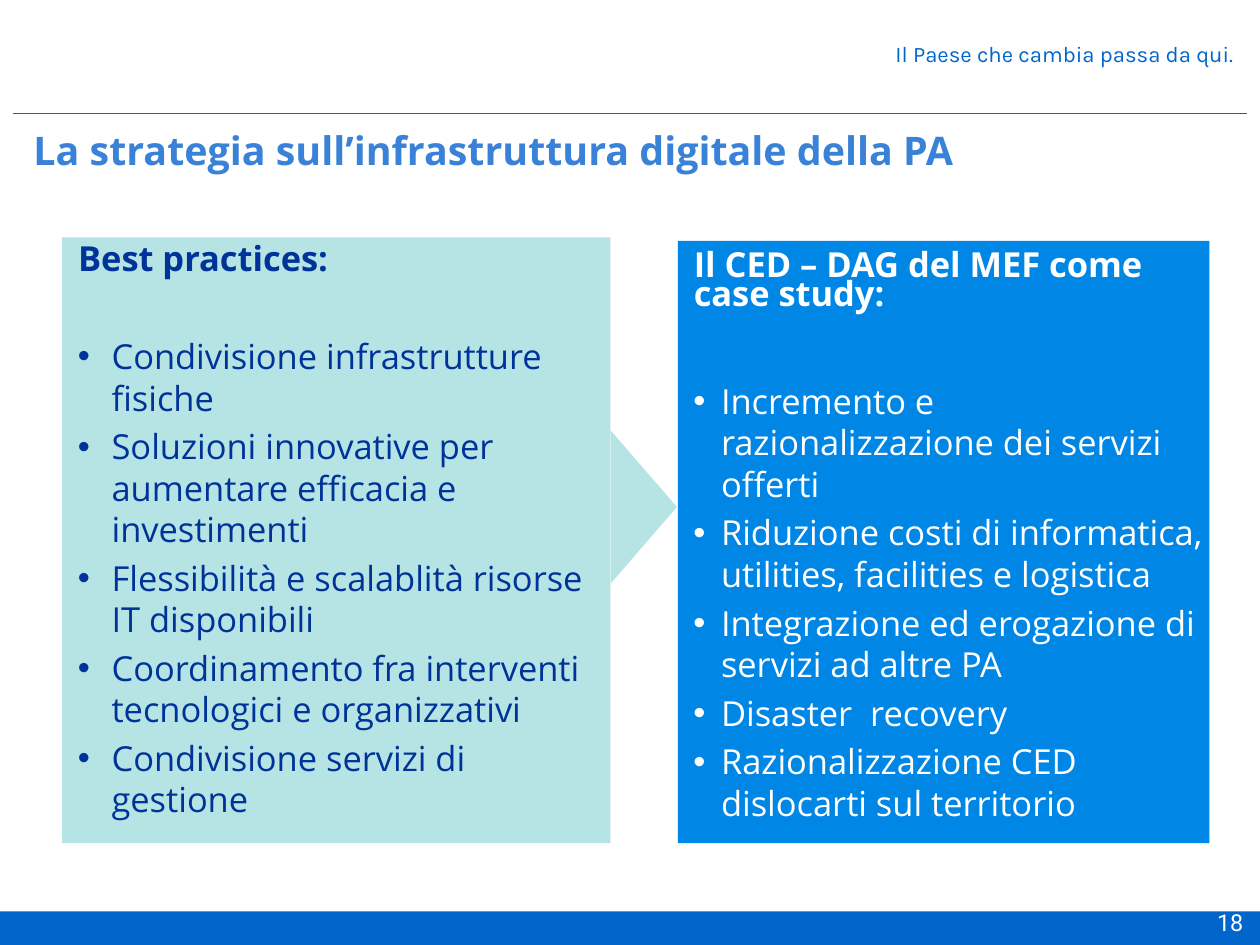
from pptx import Presentation
from pptx.dml.color import RGBColor
from pptx.enum.shapes import MSO_CONNECTOR, MSO_SHAPE
from pptx.enum.text import MSO_ANCHOR, PP_ALIGN
from pptx.oxml.ns import qn
from pptx.util import Cm, Pt
from lxml import etree

RECTANGLE = MSO_SHAPE.RECTANGLE
TRIANGLE = MSO_SHAPE.ISOSCELES_TRIANGLE
TOP, MIDDLE = MSO_ANCHOR.TOP, MSO_ANCHOR.MIDDLE
LEFT, RIGHT = PP_ALIGN.LEFT, PP_ALIGN.RIGHT

COLORS = {
    "blue": "0066CC",
    "title": "3982D8",
    "navy": "003399",
    "aqua": "B6E3E3",
    "azure": "0087E6",
    "white": "FFFFFF",
}
HEADING_INDENT = 0.46

presentation = Presentation()
presentation.slide_width = Cm(36.12)
presentation.slide_height = Cm(27.1)
slide = presentation.slides.add_slide(presentation.slide_layouts[5])


def add_filled_shape(kind, box, color):
    shape = slide.shapes.add_shape(kind, *(Cm(length) for length in box))
    shape.shadow.inherit = False
    shape.fill.solid()
    shape.fill.fore_color.rgb = RGBColor.from_string(COLORS[color])
    shape.line.fill.background()
    return shape


def format_paragraph(paragraph, text, color, font, **layout):
    paragraph.text = text
    for name, value in layout.items():
        setattr(paragraph, name, value)
    for name, value in font.items():
        setattr(paragraph.font, name, value)
    paragraph.font.color.rgb = RGBColor.from_string(COLORS[color])


# Footer band and header line
add_filled_shape(RECTANGLE, (0, 26.14, 36.12, 0.96), "blue")
header_line = slide.shapes.add_connector(
    MSO_CONNECTOR.STRAIGHT, Cm(0.38), Cm(3.25), Cm(35.74), Cm(3.25))
header_line.line.color.rgb = RGBColor.from_string(COLORS["blue"])
header_line.line.width = Pt(1)
etree.SubElement(header_line._element.spPr, qn("a:effectLst"))

# Title, slogan and page number
title = slide.shapes.title
slogan = slide.shapes.add_textbox(0, 0, 0, 0)
page_number = slide.shapes.add_textbox(0, 0, 0, 0)
labels = [
    (title, (0.71, 3.76, 33.6, 1.35), (0.25, 0.13), TOP,
     "La strategia sull’infrastruttura digitale della PA", "title",
     {"name": "Open Sans", "size": Pt(32), "bold": True},
     {"alignment": LEFT, "line_spacing": 0.8}),
    (slogan, (25.5, 0.99, 10.01, 1.12), (0.15, 0.15), MIDDLE,
     "Il Paese che cambia passa da qui.", "blue",
     {"name": "Karla", "size": Pt(18)}, {"alignment": RIGHT}),
    (page_number, (30.23, 26.04, 5.41, 1.02), (0, 0), TOP,
     "18", "white",
     {"name": "Roboto", "size": Pt(19)}, {"alignment": RIGHT}),
]
for shape, box, insets, anchor, text, color, font, layout in labels:
    shape.left, shape.top, shape.width, shape.height = (Cm(length) for length in box)
    frame = shape.text_frame
    frame.word_wrap = True
    frame.vertical_anchor = anchor
    frame.margin_left = frame.margin_right = Cm(insets[0])
    frame.margin_top = frame.margin_bottom = Cm(insets[1])
    format_paragraph(frame.paragraphs[0], text, color, font, **layout)

# Panels: practices on the left, case study on the right
panels = [
    {"box": (1.78, 6.81, 15.72, 17.37), "fill": "aqua", "color": "navy",
     "top": 0, "heading_spacing": 1.0, "gap": 46, "indent": 1.42, "hanging": 0.97,
     "heading": "Best practices:",
     "bullets": [
         "Condivisione infrastrutture fisiche",
         "Soluzioni innovative per aumentare efficacia e investimenti",
         "Flessibilità e scalablità risorse IT disponibili",
         "Coordinamento fra interventi tecnologici e organizzativi",
         "Condivisione servizi di gestione",
     ]},
    {"box": (19.43, 6.91, 15.24, 17.27), "fill": "azure", "color": "white",
     "top": 0.39, "heading_spacing": 0.7, "gap": 55, "indent": 1.24, "hanging": 0.79,
     "heading": "Il CED – DAG del MEF come case study:",
     "bullets": [
         "Incremento e razionalizzazione dei servizi offerti",
         "Riduzione costi di informatica, utilities, facilities e logistica",
         "Integrazione ed erogazione di servizi ad altre PA",
         "Disaster  recovery",
         "Razionalizzazione CED dislocarti sul territorio",
     ]},
]
for panel in panels:
    frame = add_filled_shape(RECTANGLE, panel["box"], panel["fill"]).text_frame
    frame.word_wrap = True
    frame.vertical_anchor = TOP
    frame.margin_left = frame.margin_right = frame.margin_bottom = 0
    frame.margin_top = Cm(panel["top"])

    heading = frame.paragraphs[0]
    heading._p.get_or_add_pPr().set("marL", str(Cm(HEADING_INDENT)))
    format_paragraph(heading, panel["heading"], panel["color"],
                     {"name": "Open Sans", "size": Pt(28), "bold": True},
                     alignment=LEFT, line_spacing=panel["heading_spacing"])

    for index, text in enumerate(panel["bullets"]):
        paragraph = frame.add_paragraph()
        properties = paragraph._p.get_or_add_pPr()
        properties.set("marL", str(Cm(panel["indent"])))
        properties.set("indent", str(-Cm(panel["hanging"])))
        etree.SubElement(properties, qn("a:buFont")).set("typeface", "Arial")
        etree.SubElement(properties, qn("a:buChar")).set("char", "•")
        format_paragraph(paragraph, text, panel["color"],
                         {"name": "Open Sans", "size": Pt(28), "bold": False},
                         alignment=LEFT,
                         space_before=Pt(6 if index else panel["gap"]))

# Arrow tip from the practices to the case study
arrow_tip = add_filled_shape(TRIANGLE, (16.26, 13.59, 4.39, 1.9), "aqua")
arrow_tip.rotation = 90

presentation.save("out.pptx")
